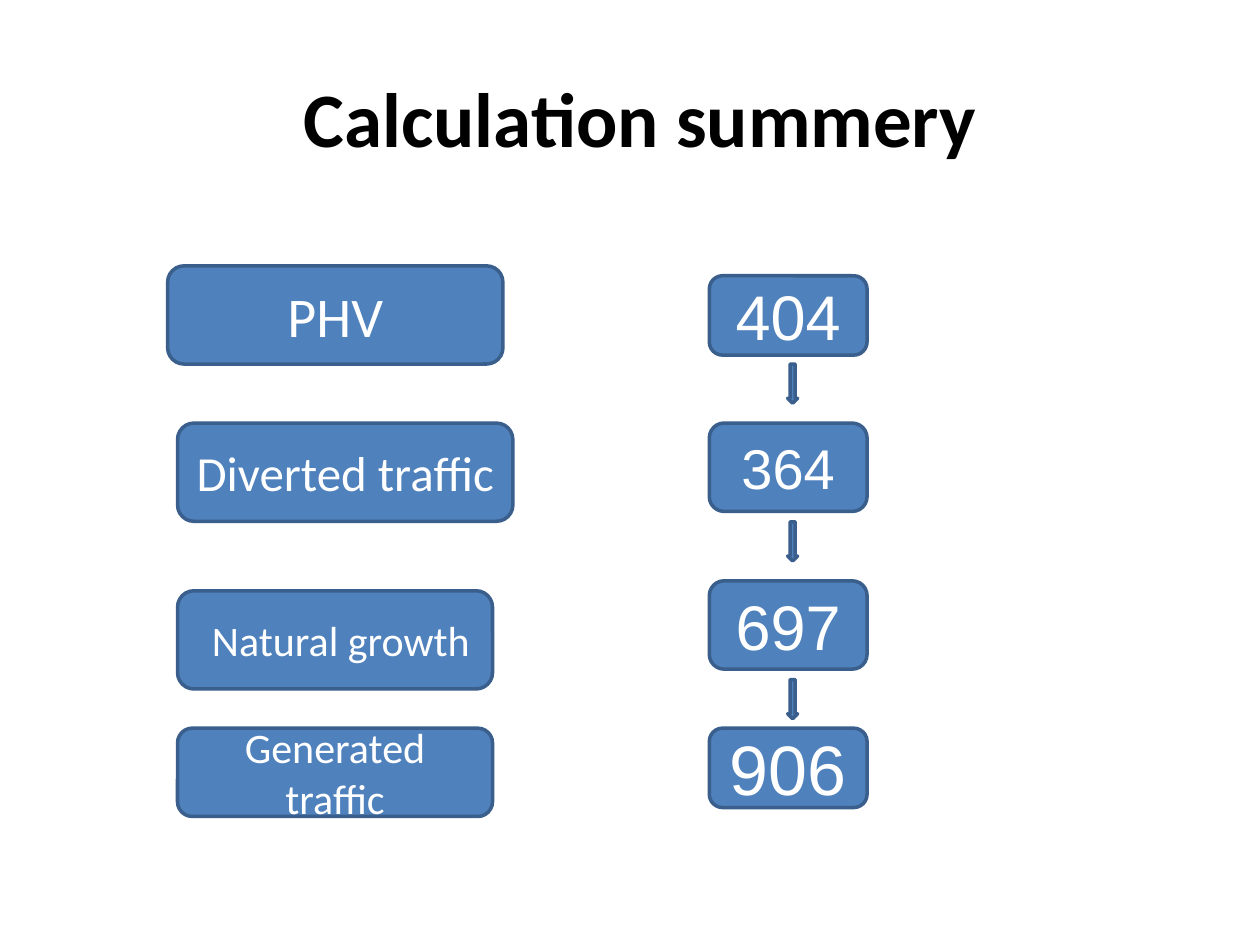
from lxml.etree import SubElement
from pptx import Presentation
from pptx.dml.color import RGBColor
from pptx.enum.shapes import MSO_SHAPE
from pptx.enum.text import MSO_ANCHOR, PP_ALIGN
from pptx.oxml.ns import qn
from pptx.util import Cm, Pt

TITLE = "Calculation summery "
LABELS = [
    ("PHV", 32, 3.38, 5.36, 6.76, 1.98),
    ("Diverted traffic", 28, 3.58, 8.53, 6.76, 1.98),
    ("Natural growth ", 24, 3.58, 11.91, 6.35, 1.98),
    ("Generated traffic", 24, 3.58, 14.68, 6.35, 1.78),
]
COUNTS = [
    ("404", 36, 5.56, 1.6),
    ("364", 32, 8.53, 1.78),
    ("697", 36, 11.71, 1.78),
    ("906", 40, 14.68, 1.6),
]
COLORS = {"fill": "4F81BD", "line": "3A5F8C", "light": "FFFFFF", "dark": "000000"}
LEFT, WIDE = 14.3, 3.18
TOP, STEP, THIN, TALL = 7.34, 3.18, 0.2, 0.79


def color(name):
    return RGBColor.from_string(COLORS[name])


def write(shape, text, size=24, tint="light", bold=False):
    frame = shape.text_frame
    frame.word_wrap = True
    frame.vertical_anchor = MSO_ANCHOR.MIDDLE
    para = frame.paragraphs[0]
    para.alignment = PP_ALIGN.CENTER
    para._p.get_or_add_pPr().set("rtl", "1")
    run = para.add_run()
    run.text = text
    font = run.font
    font.name, font.size, font.bold = "Calibri", Pt(size), bold
    font.color.rgb = color(tint)
    SubElement(font._element, qn("a:cs")).set("typeface", "Arial")


def draw(slide, kind, *place):
    shape = slide.shapes.add_shape(kind, *map(Cm, place))
    shape.shadow.inherit = False
    shape.fill.solid()
    shape.fill.fore_color.rgb = color("fill")
    shape.line.color.rgb = color("line")
    shape.line.width = Pt(2)
    return shape


def main():
    deck = Presentation()
    deck.slide_width, deck.slide_height = Cm(25.4), Cm(19.05)
    slide = deck.slides.add_slide(deck.slide_layouts[5])
    title = slide.shapes.title
    title.left, title.top, title.width, title.height = map(Cm, (1.27, 0.76, 22.86, 3.18))
    write(title, TITLE, size=44, tint="dark", bold=True)

    boxes = LABELS + [(text, size, LEFT, top, WIDE, high) for text, size, top, high in COUNTS]
    for text, size, *place in boxes:
        write(draw(slide, MSO_SHAPE.ROUNDED_RECTANGLE, *place), text, size=size)

    mid = LEFT + WIDE / 2
    for row in range(len(COUNTS) - 1):
        draw(slide, MSO_SHAPE.DOWN_ARROW, mid - THIN / 2 + 0.09, TOP + row * STEP, THIN, TALL)

    deck.save("out.pptx")


if __name__ == "__main__":
    main()
